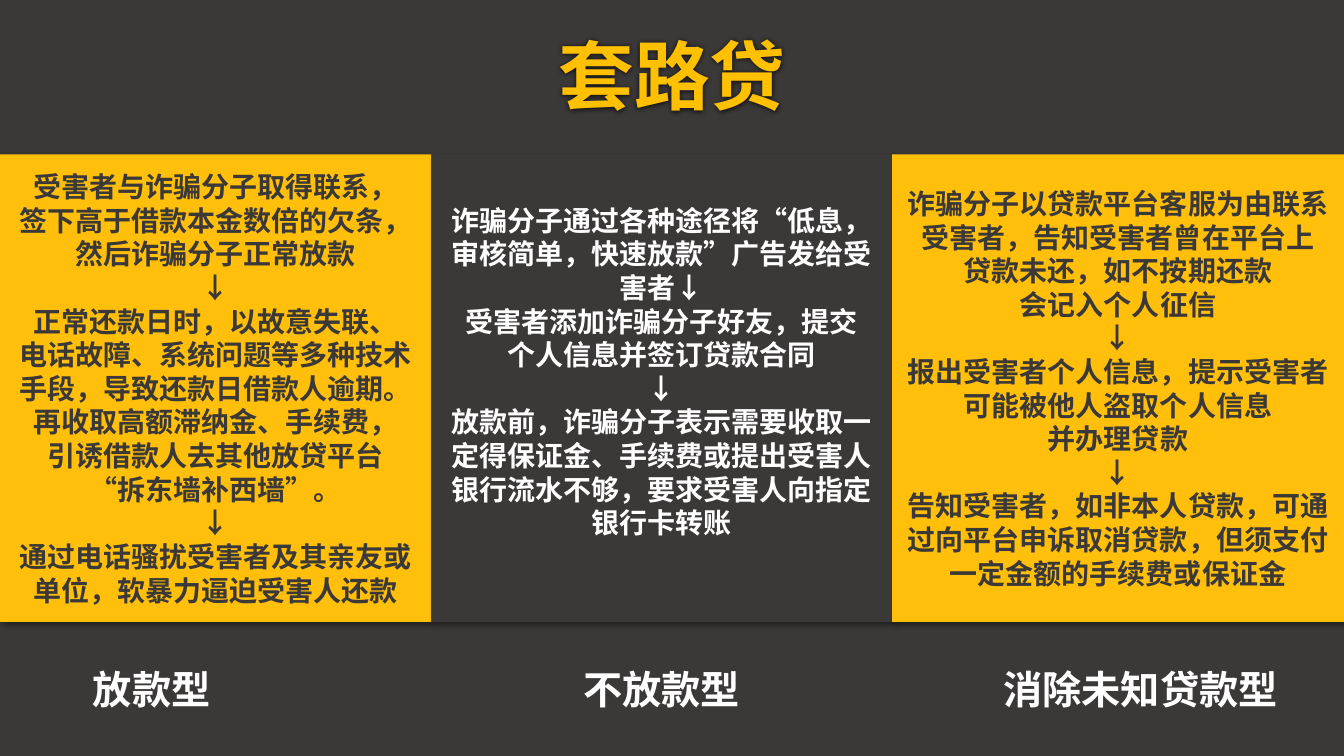
from dataclasses import dataclass

from lxml import etree
from pptx import Presentation
from pptx.dml.color import RGBColor
from pptx.enum.shapes import MSO_SHAPE
from pptx.enum.text import MSO_ANCHOR, MSO_AUTO_SIZE, PP_ALIGN
from pptx.oxml.ns import qn
from pptx.util import Pt

RECTANGLE = MSO_SHAPE.RECTANGLE
CENTER = PP_ALIGN.CENTER
MIDDLE = MSO_ANCHOR.MIDDLE
TOP = MSO_ANCHOR.TOP
FIXED = MSO_AUTO_SIZE.NONE


@dataclass(frozen=True)
class Theme:
    font: str = "Noto Sans CJK SC"
    dark: str = "3B3838"
    amber: str = "FFBF0B"
    gold: str = "FFC000"
    white: str = "FFFFFF"
    shadow: str = "000000"
    title_size: int = 54
    label_size: int = 28
    body_size: int = 20


THEME = Theme()
LABEL_HEIGHT = 32.4
LABEL_DROP = 31.6

LENDING = [
    "受害者与诈骗分子取得联系，",
    "签下高于借款本金数倍的欠条，然后诈骗分子正常放款",
    "↓",
    "正常还款日时，以故意失联、",
    "电话故障、系统问题等多种技术手段，导致还款日借款人逾期。再收取高额滞纳金、手续费，",
    "引诱借款人去其他放贷平台",
    "“拆东墙补西墙”。",
    "↓",
    "通过电话骚扰受害者及其亲友或单位，软暴力逼迫受害人还款",
]
NO_LENDING = [
    "诈骗分子通过各种途径将“低息，审核简单，快速放款”广告发给受害者↓",
    "受害者添加诈骗分子好友，提交",
    "个人信息并签订贷款合同",
    "↓",
    "放款前，诈骗分子表示需要收取一定得保证金、手续费或提出受害人银行流水不够，要求受害人向指定银行卡转账",
]
ERASING = [
    "诈骗分子以贷款平台客服为由联系受害者，告知受害者曾在平台上",
    "贷款未还，如不按期还款",
    "会记入个人征信",
    "↓",
    "报出受害者个人信息，提示受害者可能被他人盗取个人信息",
    "并办理贷款",
    "↓",
    "告知受害者，如非本人贷款，可通过向平台申诉取消贷款，但须支付一定金额的手续费或保证金",
]


def write_para(para, text, *, size, color):
    para.alignment = CENTER
    span = para.add_run()
    span.text = text
    span.font.size = Pt(size)
    span.font.bold = True
    span.font.color.rgb = RGBColor.from_string(color)
    span.font.name = THEME.font
    east_asian = etree.SubElement(span.font._element, qn("a:ea"))
    east_asian.set("typeface", THEME.font)


def write_lines(frame, lines, *, size, color, anchor=MIDDLE, wrap=True):
    frame.word_wrap = wrap
    frame.vertical_anchor = anchor
    for index, line in enumerate(lines):
        para = frame.add_paragraph() if index else frame.paragraphs[0]
        write_para(para, line, size=size, color=color)


def add_shadow(shape, *, distance=3, opacity=40):
    shape.shadow.inherit = False
    effects = shape._element.spPr.find(qn("a:effectLst"))
    shadow = etree.SubElement(effects, qn("a:outerShdw"), blurRad=str(Pt(4)),
                              dist=str(Pt(distance)), dir=str(45 * 60000),
                              algn="tl", rotWithShape="0")
    color = etree.SubElement(shadow, qn("a:srgbClr"), val=THEME.shadow)
    etree.SubElement(color, qn("a:alpha"), val=str(opacity * 1000))


def add_block(page, box, fill):
    shape = page.shapes.add_shape(RECTANGLE, *(Pt(value) for value in box))
    shape.shadow.inherit = False
    shape.fill.solid()
    shape.fill.fore_color.rgb = RGBColor.from_string(fill)
    shape.line.fill.background()
    return shape


def add_title(page, box, text):
    title = page.shapes.title
    title.left, title.top, title.width, title.height = (Pt(value) for value in box)
    frame = title.text_frame
    frame.margin_left = frame.margin_right = Pt(0)
    frame.auto_size = FIXED
    write_lines(frame, [text], size=THEME.title_size,
                color=THEME.gold, anchor=TOP, wrap=False)
    add_shadow(title, distance=0, opacity=80)


def add_column(page, box, lines, label, *, fill, color, label_left, label_width,
               space_below=0):
    left, top, width, height = box
    panel = add_block(page, box, fill)
    add_shadow(panel)
    panel.text_frame.margin_bottom = Pt(3.6 + space_below)
    write_lines(panel.text_frame, lines, size=THEME.body_size, color=color)

    label_box = (left + label_left, top + height + LABEL_DROP,
                 label_width, LABEL_HEIGHT)
    caption = add_block(page, label_box, THEME.dark)
    write_lines(caption.text_frame, [label], size=THEME.label_size,
                color=THEME.white)


def build_slide(deck):
    page = deck.slides.add_slide(deck.slide_layouts[5])
    page.background.fill.solid()
    page.background.fill.fore_color.rgb = RGBColor.from_string(THEME.dark)
    add_title(page, (391.7, 17.3, 176.4, 72.7), "套路贷")

    top, height = 110.2, 334.1
    add_column(page, (0, top, 308.2, height), LENDING, "放款型",
               fill=THEME.amber, color=THEME.dark,
               label_left=43.9, label_width=128.9)
    add_column(page, (308.2, top, 329, height), NO_LENDING, "不放款型",
               fill=THEME.dark, color=THEME.white,
               label_left=100, label_width=128.9, space_below=24)
    add_column(page, (637.2, top, 322.8, height), ERASING, "消除未知贷款型",
               fill=THEME.amber, color=THEME.dark,
               label_left=64.1, label_width=226.8)


def main():
    deck = Presentation()
    deck.slide_width = Pt(960)
    deck.slide_height = Pt(540)
    build_slide(deck)
    deck.save("out.pptx")


if __name__ == "__main__":
    main()
